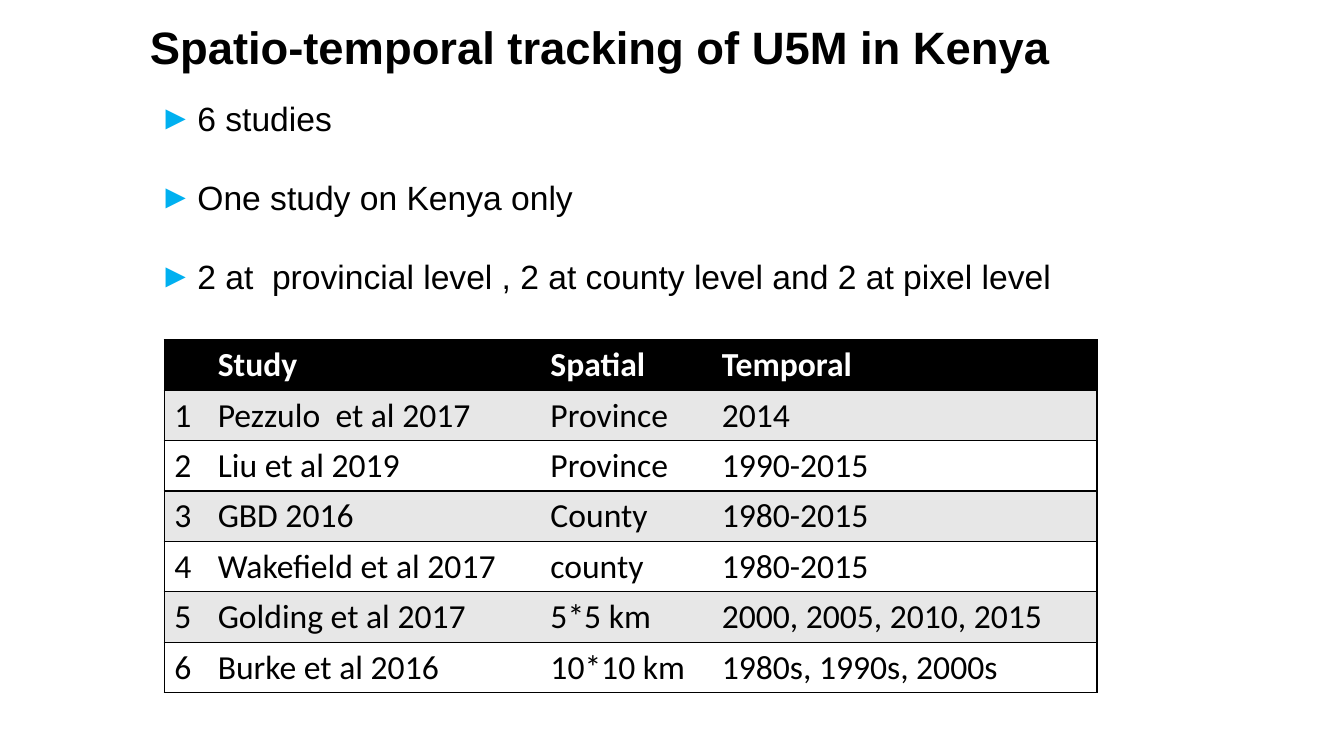
from lxml.etree import SubElement
from pptx import Presentation
from pptx.dml.color import RGBColor
from pptx.enum.text import MSO_ANCHOR, PP_ALIGN
from pptx.oxml.ns import qn
from pptx.util import Inches, Pt

BLACK = RGBColor(0x00, 0x00, 0x00)
WHITE = RGBColor(0xFF, 0xFF, 0xFF)
GREY = RGBColor(0xE7, 0xE7, 0xE7)
CYAN = RGBColor(0x00, 0xB0, 0xF0)

FINDINGS = [
    "6 studies",
    "One study on Kenya only",
    "2 at  provincial level , 2 at county level and 2 at pixel level",
]
STUDIES = [
    ("", "Study", "Spatial", "Temporal"),
    ("1", "Pezzulo  et al 2017", "Province", "2014"),
    ("2", "Liu et al 2019", "Province", "1990-2015"),
    ("3", "GBD 2016", "County", "1980-2015"),
    ("4", "Wakefield et al 2017", "county", "1980-2015"),
    ("5", "Golding et al 2017", "5*5 km", "2000, 2005, 2010, 2015"),
    ("6", "Burke et al 2016", "10*10 km", "1980s, 1990s, 2000s"),
]
COLUMN_WIDTHS = [0.43, 3.3, 1.7, 3.82]
ROW_HEIGHT = 0.5


def style_font(font, name, size, color, bold=False):
    font.name = name
    font.size = Pt(size)
    font.color.rgb = color
    font.bold = bold


def add_border(cell, edge, visible):
    line = SubElement(cell._tc.get_or_add_tcPr(), qn(f"a:{edge}"), w=str(Pt(1)))
    if visible:
        fill = SubElement(line, qn("a:solidFill"))
        SubElement(fill, qn("a:srgbClr"), val=str(BLACK))
    else:
        SubElement(line, qn("a:noFill"))


prs = Presentation()
prs.slide_width = Inches(13.33)
prs.slide_height = Inches(7.5)
slide = prs.slides.add_slide(prs.slide_layouts[6])

title = slide.shapes.add_textbox(Inches(1.36), Inches(0.29), Inches(9.18), Inches(0.5))
title.text_frame.word_wrap = True
title.text_frame.vertical_anchor = MSO_ANCHOR.BOTTOM
title.text_frame.text = "Spatio-temporal tracking of U5M in Kenya"
heading = title.text_frame.paragraphs[0]
heading.alignment = PP_ALIGN.CENTER
heading.line_spacing = 0.9
style_font(heading.runs[0].font, "Arial", 32.4, BLACK, bold=True)

findings = slide.shapes.add_textbox(Inches(1.48), Inches(0.92), Inches(9.13), Inches(2.12))
findings.text_frame.word_wrap = True
findings.text_frame.text = "\n".join(FINDINGS)
for index, finding in enumerate(findings.text_frame.paragraphs):
    if index:
        finding.space_before = Pt(27.6)
    properties = finding._p.get_or_add_pPr()
    properties.set("marL", str(Inches(0.38)))
    properties.set("indent", str(Inches(-0.38)))
    bullet_color = SubElement(properties, qn("a:buClr"))
    SubElement(bullet_color, qn("a:srgbClr"), val=str(CYAN))
    SubElement(properties, qn("a:buFont"), typeface="Arial")
    SubElement(properties, qn("a:buChar"), char="►")
    style_font(finding.runs[0].font, "Arial", 24, BLACK)

studies = slide.shapes.add_table(
    len(STUDIES), len(COLUMN_WIDTHS), Inches(1.63), Inches(3.37),
    Inches(sum(COLUMN_WIDTHS)), Inches(ROW_HEIGHT * len(STUDIES)),
).table
for column, width in zip(studies.columns, COLUMN_WIDTHS):
    column.width = Inches(width)

last_column = len(COLUMN_WIDTHS) - 1
for row, study in enumerate(STUDIES):
    is_header = row == 0
    row_fill = BLACK if is_header else GREY if row % 2 else WHITE
    for column, value in enumerate(study):
        cell = studies.cell(row, column)
        add_border(cell, "lnL", column == 0)
        add_border(cell, "lnR", column == last_column)
        add_border(cell, "lnT", True)
        add_border(cell, "lnB", True)
        cell.fill.solid()
        cell.fill.fore_color.rgb = row_fill
        cell.text_frame.text = value
        for run in cell.text_frame.paragraphs[0].runs:
            style_font(run.font, "Calibri", 24, WHITE if is_header else BLACK, is_header)

prs.save("out.pptx")
